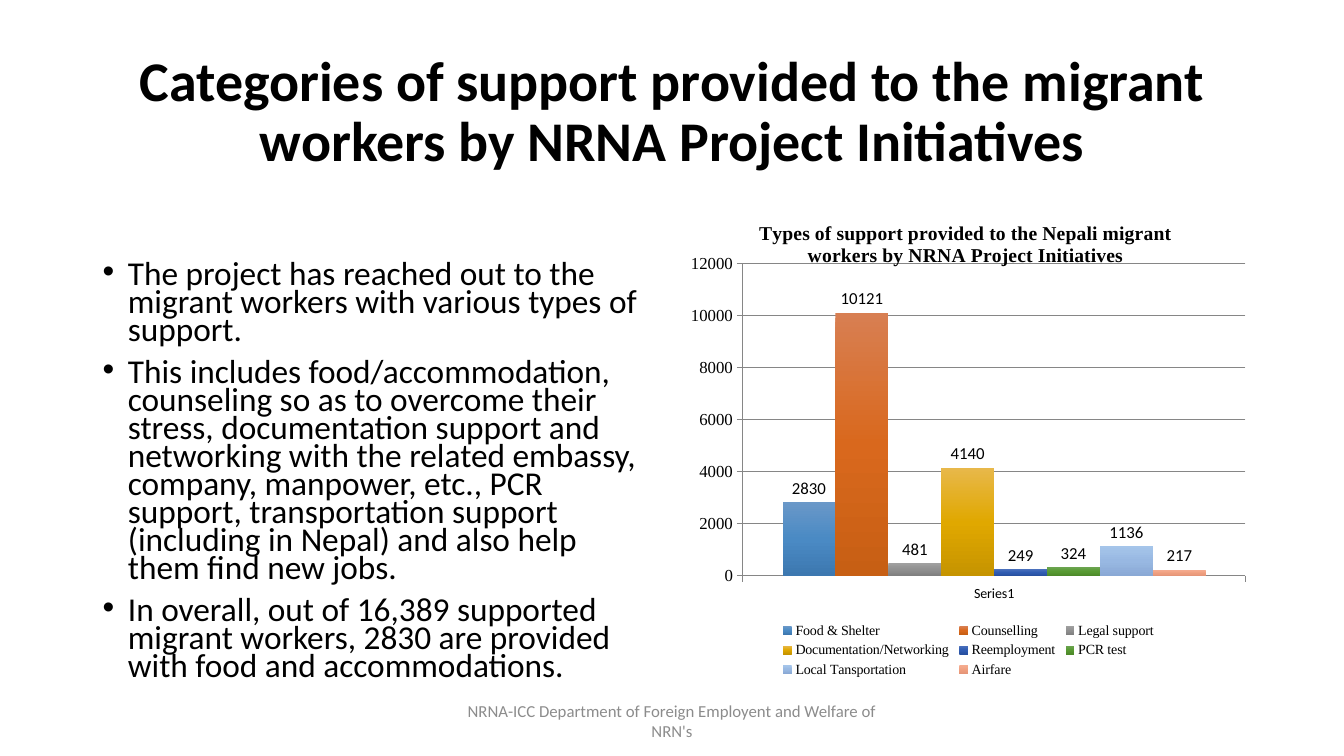
from lxml import etree
from pptx import Presentation
from pptx import util as u
from pptx.chart.data import CategoryChartData
from pptx.dml.color import RGBColor
from pptx.enum import chart as ch, text
from pptx.oxml import parse_xml
from pptx.oxml.ns import nsdecls, qn

TITLE = "Categories of support provided to the migrant workers by NRNA Project Initiatives"
POINTS = [
    "The project has reached out to the migrant workers with various types of support.",
    "This includes food/accommodation, counseling so as to overcome their stress, documentation support and "
    "networking with the related embassy, company, manpower, etc., PCR support, transportation support "
    "(including in Nepal) and also help them find new jobs.",
    "In overall, out of 16,389 supported migrant workers, 2830 are provided with food and accommodations.",
]
FOOTER = "NRNA-ICC Department of Foreign Employent and Welfare of NRN's"
CHART_TITLE = "Types of support provided to the Nepali migrant workers by NRNA Project Initiatives"
CATEGORY = "Series1"
SUPPORT = [
    ("Food & Shelter", 2830, ("6A98C8", "4A8AC4", "3D78B0")),
    ("Counselling", 10121, ("D87F52", "D9681D", "C75F14")),
    ("Legal support", 481, ("A0A0A0", "909090", "808080")),
    ("Documentation/Networking", 4140, ("E8B84A", "E0A800", "C69400")),
    ("Reemployment", 249, ("4A70BC", "305CB2", "2850A0")),
    ("PCR test", 324, ("6BA450", "589A33", "4D8A2A")),
    ("Local Tansportation", 1136, ("A5C5EA", "98B8E2", "8AA9D5")),
    ("Airfare", 217, ("F5AC90", "F0A080", "E59578")),
]
SANS, SERIF = "Calibri", "Times New Roman"
WIDTH, HEIGHT = 13.33, 7.5
MARGIN, GUTTER = 0.92, 0.16
COLUMN = (WIDTH - 2 * MARGIN - GUTTER) / 2
CONTENT_TOP, CONTENT_BOTTOM, POINTS_TOP = 2, 6.76, 2.56


def color(value):
    return RGBColor.from_string(value)


def style(font, size, name=SANS, value="000000", bold=False):
    font.size, font.name, font.bold = u.Pt(size), name, bold
    font.color.rgb = color(value)


def place(shape, left, top, width, height):
    shape.left, shape.top, shape.width, shape.height = map(u.Inches, (left, top, width, height))


def write(para, words, size, **look):
    span = para.add_run()
    span.text = words
    style(span.font, size, **look)


def add_bullet(para):
    props = para._p.get_or_add_pPr()
    props.set("marL", str(u.Inches(0.25)))
    props.set("indent", str(-u.Inches(0.25)))
    etree.SubElement(props, qn("a:buFont")).set("typeface", "Arial")
    etree.SubElement(props, qn("a:buChar")).set("char", "•")


def layout_xml(left, top, width, height, inner=False):
    target = '<c:layoutTarget val="inner"/>' if inner else ""
    parts = zip("xywh", (left, top, width, height))
    values = "".join(f'<c:{key} val="{value}"/>' for key, value in parts)
    return parse_xml(f'<c:layout {nsdecls("c")}><c:manualLayout>{target}'
                     f'<c:xMode val="edge"/><c:yMode val="edge"/>{values}</c:manualLayout></c:layout>')


def fill_gradient(series, stops):
    series.format.fill.background()
    props = series._element.spPr
    marks = "".join(f'<a:gs pos="{50000 * i}"><a:srgbClr val="{stop}"/></a:gs>' for i, stop in enumerate(stops))
    gradient = parse_xml(f'<a:gradFill {nsdecls("a")} rotWithShape="1"><a:gsLst>{marks}</a:gsLst>'
                         '<a:lin ang="5400000" scaled="0"/></a:gradFill>')
    props.replace(props.find(qn("a:noFill")), gradient)
    series.format.line.fill.background()


def add_title(page):
    box = page.shapes.title
    place(box, MARGIN, 0.4, WIDTH - 2 * MARGIN, 1.45)
    frame = box.text_frame
    frame.auto_size = text.MSO_AUTO_SIZE.NONE
    frame.vertical_anchor = text.MSO_ANCHOR.MIDDLE
    para = frame.paragraphs[0]
    para.alignment, para.line_spacing = text.PP_ALIGN.CENTER, 0.9
    write(para, TITLE, 40, bold=True)


def add_box(page, left, top, width, height):
    box = page.shapes.add_textbox(*map(u.Inches, (left, top, width, height)))
    box.text_frame.word_wrap = True
    return box.text_frame


def add_points(page):
    frame = add_box(page, MARGIN, POINTS_TOP, COLUMN, CONTENT_BOTTOM - POINTS_TOP)
    for i, point in enumerate(POINTS):
        para = frame.add_paragraph() if i else frame.paragraphs[0]
        add_bullet(para)
        para.line_spacing = 0.7
        para.space_before = u.Pt(10 if i else 0)
        write(para, point, 23.8)


def add_support_chart(page):
    data = CategoryChartData()
    data.categories = [CATEGORY]
    for name, count, _ in SUPPORT:
        data.add_series(name, [count])
    spot = (MARGIN + COLUMN + GUTTER, CONTENT_TOP, COLUMN, CONTENT_BOTTOM - CONTENT_TOP)
    chart = page.shapes.add_chart(ch.XL_CHART_TYPE.COLUMN_CLUSTERED, *map(u.Inches, spot), data).chart
    style(chart.font, 10)
    chart.has_title = True
    write(chart.chart_title.text_frame.paragraphs[0], CHART_TITLE, 14, name=SERIF, bold=True)
    chart.chart_title.include_in_layout = False

    plot = chart.plots[0]
    plot.gap_width, plot.overlap, plot.vary_by_categories = 150, 0, False
    for series, (_, _, stops) in zip(plot.series, SUPPORT):
        fill_gradient(series, stops)
        labels = series.data_labels
        labels.show_value = True
        labels.position = ch.XL_LABEL_POSITION.OUTSIDE_END
        style(labels.font, 12)

    values = chart.value_axis
    values.minimum_scale, values.maximum_scale, values.major_unit = 0, 12000, 2000
    values.has_major_gridlines = True
    for axis, size, name in ((values, 12, SERIF), (chart.category_axis, 10, SANS)):
        style(axis.tick_labels.font, size, name)
        axis.major_tick_mark = ch.XL_TICK_MARK.OUTSIDE
        axis.format.line.color.rgb = color("868686")
    values.major_gridlines.format.line.color.rgb = color("868686")

    chart.has_legend = True
    legend = chart.legend
    legend.position, legend.include_in_layout = ch.XL_LEGEND_POSITION.BOTTOM, False
    style(legend.font, 10, SERIF)
    for old in legend._element.findall(qn("c:layout")):
        legend._element.remove(old)
    legend._element.find(qn("c:legendPos")).addnext(layout_xml(0.17, 0.87, 0.67, 0.13))
    area = chart._chartSpace.chart.plotArea
    for old in area.findall(qn("c:layout")):
        area.remove(old)
    area.insert(0, layout_xml(0.11, 0.13, 0.88, 0.65, inner=True))


def add_footer(page):
    frame = add_box(page, (WIDTH - 4.5) / 2, 6.95, 4.5, 0.4)
    frame.vertical_anchor = text.MSO_ANCHOR.MIDDLE
    para = frame.paragraphs[0]
    para.alignment = text.PP_ALIGN.CENTER
    write(para, FOOTER, 12, value="8C8C8C")


def main():
    deck = Presentation()
    deck.slide_width, deck.slide_height = u.Inches(WIDTH), u.Inches(HEIGHT)
    page = deck.slides.add_slide(deck.slide_layouts[5])
    add_title(page)
    add_points(page)
    add_support_chart(page)
    add_footer(page)
    deck.save("out.pptx")


if __name__ == "__main__":
    main()
